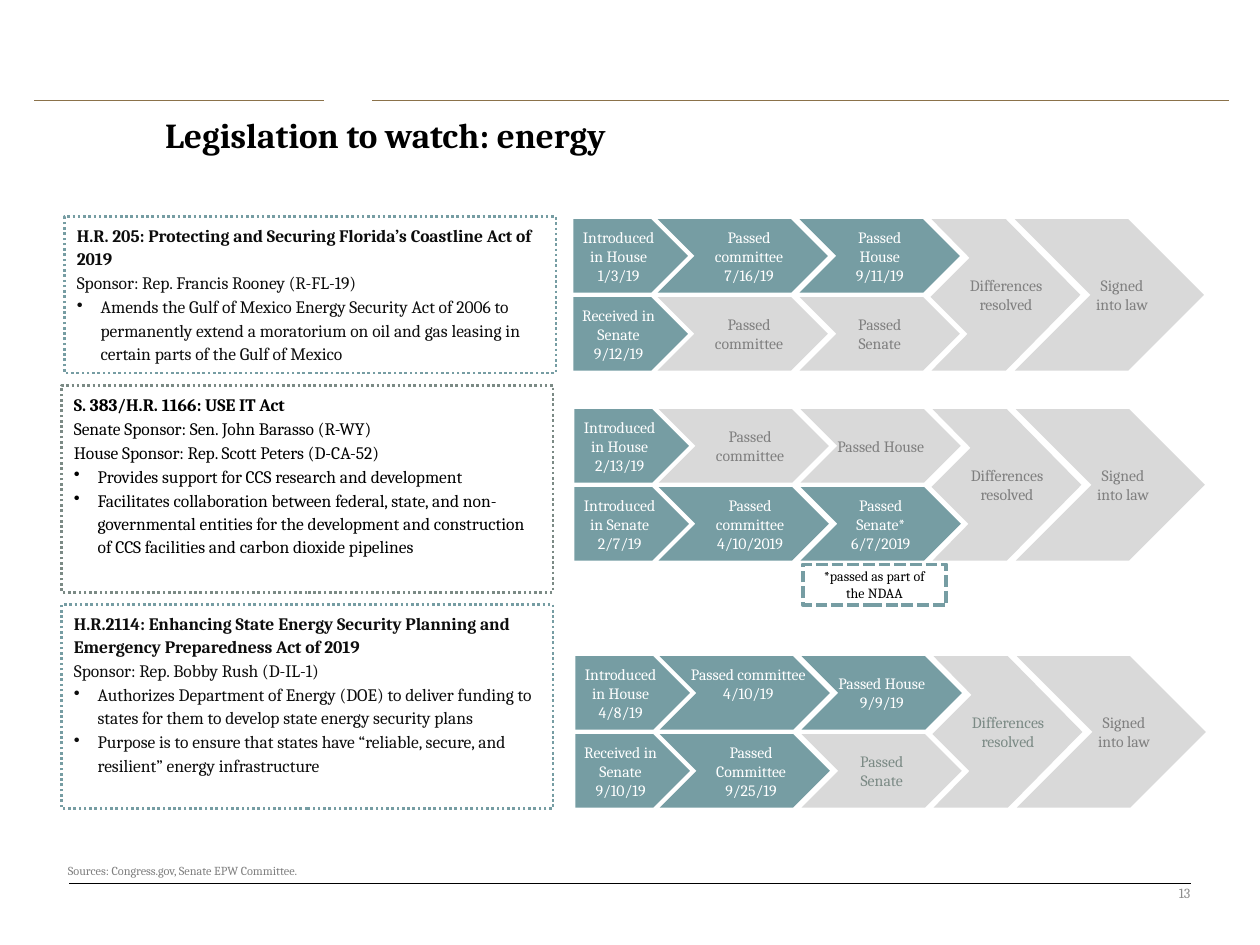
from lxml import etree
from pptx import Presentation
from pptx.dml.color import RGBColor
from pptx.enum.dml import MSO_LINE
from pptx.enum.shapes import MSO_CONNECTOR, MSO_SHAPE
from pptx.enum.text import MSO_ANCHOR, MSO_AUTO_SIZE, PP_ALIGN
from pptx.oxml.ns import qn
from pptx.util import Cm, Pt

RECT, PLATE, CHEVRON = MSO_SHAPE.RECTANGLE, MSO_SHAPE.PENTAGON, MSO_SHAPE.CHEVRON
STRAIGHT = MSO_CONNECTOR.STRAIGHT
DOTTED, DASHED = MSO_LINE.ROUND_DOT, MSO_LINE.SQUARE_DOT
TOP, MIDDLE = MSO_ANCHOR.TOP, MSO_ANCHOR.MIDDLE
LEFT, CENTER, RIGHT = PP_ALIGN.LEFT, PP_ALIGN.CENTER, PP_ALIGN.RIGHT
FIXED = MSO_AUTO_SIZE.NONE

FONT = "Cambria"
COLORS = {
    "teal": "769DA3", "light": "D9D9D9", "white": "FFFFFF", "black": "000000",
    "ink": "0D0D0D", "gray": "808080", "mid_gray": "7F7F7F", "sage": "7B8A85",
    "number": "8C8C8C", "bronze": "8B724A",
}
INSETS = (0.25, 0.13, 0.25, 0.13)
STEP_HEIGHT, ROW_PITCH, FLOW_HEIGHT = 1.48, 1.57, 3.05
STEPS = [
    (PLATE, 0, 2.31, (0.13, 0.13, 0.25, 0.13)),
    (CHEVRON, 1.7, 3.43, (0.25, 0.13, 0, 0.13)),
    (CHEVRON, 4.56, 3.23, (0, 0.13, 0, 0.13)),
]
DIAMOND_WIDTH, DIAMOND_HEIGHT = 1.47, 1.35

BILLS = [
    ((1.3, 4.37, 9.91, 3.15), "teal", "ink",
     ["H.R. 205: Protecting and Securing Florida’s Coastline Act of 2019",
      "Sponsor: Rep. Francis Rooney (R-FL-19)"],
     ["Amends the Gulf of Mexico Energy Security Act of 2006 to permanently extend "
      "a moratorium on oil and gas leasing in certain parts of the Gulf of Mexico"]),
    ((1.24, 7.77, 9.91, 4.17), "sage", "black",
     ["S. 383/H.R. 1166: USE IT Act",
      "Senate Sponsor: Sen. John Barasso (R-WY)",
      "House Sponsor: Rep. Scott Peters (D-CA-52)"],
     ["Provides support for CCS research and development",
      "Facilitates collaboration between federal, state, and non-governmental entities "
      "for the development and construction of CCS facilities and carbon dioxide pipelines"]),
    ((1.24, 12.19, 9.91, 4.11), "teal", "ink",
     ["H.R.2114: Enhancing State Energy Security Planning and Emergency "
      "Preparedness Act of 2019",
      "Sponsor: Rep. Bobby Rush (D-IL-1)"],
     ["Authorizes Department of Energy (DOE) to deliver funding to states for them "
      "to develop state energy security plans",
      "Purpose is to ensure that states have “reliable, secure, and resilient” "
      "energy infrastructure"]),
]
FLOWS = [
    (11.56, 4.42, "gray", [
        [("Introduced in House\n1/3/19", True), ("Passed\ncommittee\n7/16/19", True),
         ("Passed\vHouse\n9/11/19", True)],
        [("Received in Senate\n9/12/19", True), ("Passed committee", False),
         ("Passed\vSenate", False)]]),
    (11.58, 8.25, "mid_gray", [
        [("Introduced in House\n2/13/19", True), ("Passed committee", False),
         ("Passed House", False)],
        [("Introduced in Senate 2/7/19", True), ("Passed committee\n4/10/2019", True),
         ("Passed Senate*\n6/7/2019", True)]]),
    (11.6, 13.23, "sage", [
        [("Introduced in House\n4/8/19", True), ("", True),
         ("Passed House\n9/9/19", True)],
        [("Received in Senate\n9/10/19", True), ("Passed\nCommittee\n9/25/19", True),
         ("Passed Senate", False)]]),
]


def rgb(name):
    return RGBColor.from_string(COLORS[name])


def write(holder, text, size, color, align=LEFT, anchor=TOP, insets=INSETS,
          wrap=True, spacing=None):
    frame = holder.text_frame
    frame.text = text
    frame.auto_size = FIXED
    frame.word_wrap = wrap
    frame.vertical_anchor = anchor
    (frame.margin_left, frame.margin_top,
     frame.margin_right, frame.margin_bottom) = map(Cm, insets)
    for paragraph in frame.paragraphs:
        paragraph.alignment = align
        paragraph.line_spacing = spacing
        for run in paragraph.runs:
            run.font.name = FONT
            run.font.size = Pt(size)
            run.font.color.rgb = rgb(color)
    return frame


def add_block(slide, preset, box, fill=None, line=None, width=1.5, dash=DOTTED):
    block = slide.shapes.add_shape(preset, *map(Cm, box))
    block.shadow.inherit = False
    if fill:
        block.fill.solid()
        block.fill.fore_color.rgb = rgb(fill)
    else:
        block.fill.background()
    if line:
        block.line.color.rgb = rgb(line)
        block.line.width = Pt(width)
        block.line.dash_style = dash
    else:
        block.line.fill.background()
    return block


def add_label(slide, box, *args, **options):
    label = slide.shapes.add_textbox(*map(Cm, box))
    write(label, *args, **options)


def add_rule(slide, start, end, y, color):
    rule = slide.shapes.add_connector(STRAIGHT, Cm(start), Cm(y), Cm(end), Cm(y))
    rule.line.color.rgb = rgb(color)
    rule.line.width = Pt(0.5)
    etree.SubElement(rule._element.spPr, qn("a:effectLst"))


def add_header(slide, box):
    left, top, width, height = box
    add_rule(slide, left, left + 5.84, top, "bronze")
    add_rule(slide, left + 6.81, left + width, top, "bronze")
    title = slide.shapes.title
    title.left, title.top = Cm(left + 2.39), Cm(top + 0.23)
    title.width, title.height = Cm(width - 2.62), Cm(height - 0.23)
    frame = write(title, "Legislation to watch: energy", 20, "black", spacing=0.9)
    frame.paragraphs[0].runs[0].font.bold = True


def add_footer(slide, box):
    left, top, width, height = box
    add_rule(slide, left + 0.28, left + width, top + 0.56, "black")
    add_label(slide, (left, top, width, 0.53),
              "Sources: Congress.gov, Senate EPW Committee.", 7, "gray", spacing=1.1)
    add_label(slide, (left + width - 6.08, top + 0.25, 6.33, height - 0.25),
              "13", 8, "number", align=RIGHT, anchor=MIDDLE)


def add_bill(slide, box, border, ink, headings, points):
    bill = add_block(slide, RECT, box, line=border)
    frame = write(bill, "\n".join(headings + points), 10, ink, spacing=1.1)
    for paragraph in frame.paragraphs:
        paragraph.space_after = Pt(0.5)
    frame.paragraphs[0].runs[0].font.bold = True
    for paragraph in frame.paragraphs[len(headings):]:
        properties = paragraph._p.get_or_add_pPr()
        properties.set("marL", str(Cm(0.48)))
        properties.set("indent", str(-Cm(0.48)))
        etree.SubElement(properties, qn("a:buChar"), char="•")


def add_flow(slide, left, top, pending, rows):
    diamond = add_block(slide, RECT, (left + 7.46, top + (FLOW_HEIGHT - DIAMOND_HEIGHT) / 2,
                                      DIAMOND_WIDTH, DIAMOND_HEIGHT), "light")
    diamond.rotation = 315
    resolved = add_block(slide, CHEVRON, (left + 7.22, top, 3, FLOW_HEIGHT), "light")
    write(resolved, "Differences\nresolved", 9, pending, CENTER, MIDDLE,
          (0.25, 0, 0.25, 0), wrap=False)
    for row, steps in enumerate(rows):
        for (preset, offset, width, insets), (text, done) in zip(STEPS, steps):
            step = add_block(slide, preset, (left + offset, top + row * ROW_PITCH,
                                             width, STEP_HEIGHT), "teal" if done else "light")
            if text:
                write(step, text, 9, "white" if done else pending, CENTER, MIDDLE, insets)
    signed = add_block(slide, CHEVRON, (left + 8.9, top, 3.81, FLOW_HEIGHT), "light")
    write(signed, "Signed\ninto law", 9, "gray", CENTER, MIDDLE,
          (1.02, 0, 0.25, 0), wrap=False)


def main():
    deck = Presentation()
    deck.slide_width, deck.slide_height = Cm(25.4), Cm(19.05)
    slide = deck.slides.add_slide(deck.slide_layouts[5])
    add_header(slide, (0.69, 2.03, 24.08, 2.01))
    add_footer(slide, (1.12, 17.25, 22.88, 1.27))
    for bill in BILLS:
        add_bill(slide, *bill)
    for flow in FLOWS:
        add_flow(slide, *flow)
    add_label(slide, (13.61, 13.28, 2.95, 1.8), "Passed committee\n4/10/19", 9, "white", CENTER)
    note = add_block(slide, RECT, (16.18, 11.38, 2.9, 0.81), line="teal", width=2.25, dash=DASHED)
    write(note, "*passed as part of the NDAA", 8, "black", CENTER, MIDDLE)
    deck.save("out.pptx")


if __name__ == "__main__":
    main()
